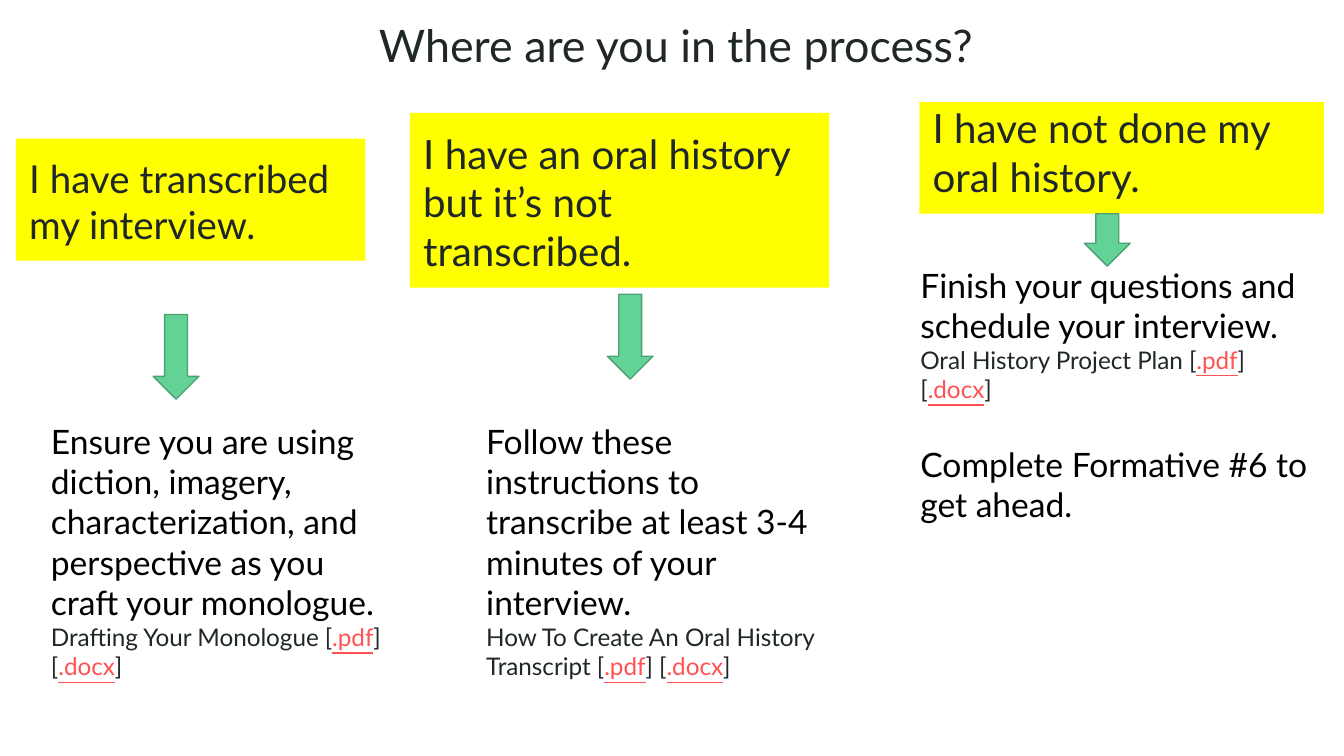
from pptx import Presentation
from pptx.dml.color import RGBColor
from pptx.enum.shapes import MSO_SHAPE
from pptx.enum.text import MSO_ANCHOR, MSO_AUTO_SIZE, PP_ALIGN
from pptx.util import Pt

COLORS = {"ink": "202729", "body": "000000", "link": "FF5252",
          "heading": "FFFF00", "arrow": "63D297", "arrow_line": "4BA173"}
INSET = 7.2
ARROW_WIDTH = 24.5

# Each column: heading, arrow and steps, with boxes as left, top, width, height
COLUMNS = [
    {"heading": "I have transcribed my interview.", "size": 20.6,
     "heading_box": (8.6, 74.2, 187.2, 65.5),
     "arrow": (82.1, 168.5, ARROW_WIDTH, 45.4),
     "step": "Ensure you are using diction, imagery, characterization, "
             "and perspective as you craft your monologue.",
     "handout": "Drafting Your Monologue",
     "step_box": (20.2, 218.2, 195.8, 154.8)},
    {"heading": "I have an oral history but it’s not transcribed.", "size": 21.6,
     "heading_box": (219.6, 60.5, 224.6, 93.6),
     "arrow": (325.4, 157.7, ARROW_WIDTH, 45.4),
     "step": "Follow these instructions to transcribe at least 3-4 minutes "
             "of your interview.",
     "handout": "How To Create An Oral History Transcript",
     "step_box": (253.4, 218.2, 195.8, 154.8)},
    {"heading": "I have not done my oral history.", "size": 21.6,
     "heading_box": (492.5, 54.7, 216.7, 59.8),
     "arrow": (581, 114.5, ARROW_WIDTH, 28.1),
     "step": "Finish your questions and schedule your interview.",
     "handout": "Oral History Project Plan",
     "extra": "Complete Formative #6 to get ahead.",
     "step_box": (486, 134.6, 227, 139.7)},
]


def rgb(name):
    return RGBColor.from_string(COLORS[name])


def points(box):
    return [Pt(v) for v in box]


def set_frame(tf, anchor):
    values = {"word_wrap": True, "auto_size": MSO_AUTO_SIZE.NONE,
              "vertical_anchor": anchor}
    for side in ("left", "top", "right", "bottom"):
        values[f"margin_{side}"] = Pt(INSET)
    for name, value in values.items():
        setattr(tf, name, value)


def add_run(p, text, size, color, underline=False):
    p.alignment = PP_ALIGN.LEFT
    r = p.add_run()
    r.text = text
    values = {"name": "Lato", "size": Pt(size), "underline": underline}
    for name, value in values.items():
        setattr(r.font, name, value)
    r.font.color.rgb = rgb(color)


def set_title(s, text, box):
    sp = s.shapes.title
    sp.left, sp.top, sp.width, sp.height = points(box)
    set_frame(sp.text_frame, MSO_ANCHOR.BOTTOM)
    add_run(sp.text_frame.paragraphs[0], text, 24, "ink")


def add_filled(s, kind, box, fill):
    sp = s.shapes.add_shape(kind, *points(box))
    sp.shadow.inherit = False
    sp.fill.solid()
    sp.fill.fore_color.rgb = rgb(fill)
    return sp


def add_heading(s, text, size, box):
    sp = add_filled(s, MSO_SHAPE.RECTANGLE, box, "heading")
    sp.line.fill.background()
    set_frame(sp.text_frame, MSO_ANCHOR.BOTTOM)
    add_run(sp.text_frame.paragraphs[0], text, size, "ink")


def add_arrow(s, box):
    sp = add_filled(s, MSO_SHAPE.DOWN_ARROW, box, "arrow")
    sp.line.color.rgb = rgb("arrow_line")
    sp.line.width = Pt(0.75)


def add_steps(s, step, handout, box, extra=None):
    tf = s.shapes.add_textbox(*points(box)).text_frame
    set_frame(tf, MSO_ANCHOR.TOP)
    add_run(tf.paragraphs[0], step, 18, "body")

    # Handout line with its two file formats
    p = tf.add_paragraph()
    for text, is_link in ((f"{handout} [", False), (".pdf", True), ("] [", False),
                          (".docx", True), ("]", False)):
        add_run(p, text, 13, "link" if is_link else "ink", is_link)

    if extra:
        p = tf.add_paragraph()
        p.space_before = Pt(21.6)
        add_run(p, extra, 18, "body")


def main():
    prs = Presentation()
    prs.slide_width, prs.slide_height = Pt(720), Pt(405)
    s = prs.slides.add_slide(prs.slide_layouts[5])
    set_title(s, "Where are you in the process?", (195.8, 0, 357.8, 45.4))
    for col in COLUMNS:
        add_heading(s, col["heading"], col["size"], col["heading_box"])
        add_steps(s, col["step"], col["handout"], col["step_box"], col.get("extra"))
        add_arrow(s, col["arrow"])
    prs.save("out.pptx")


if __name__ == "__main__":
    main()
